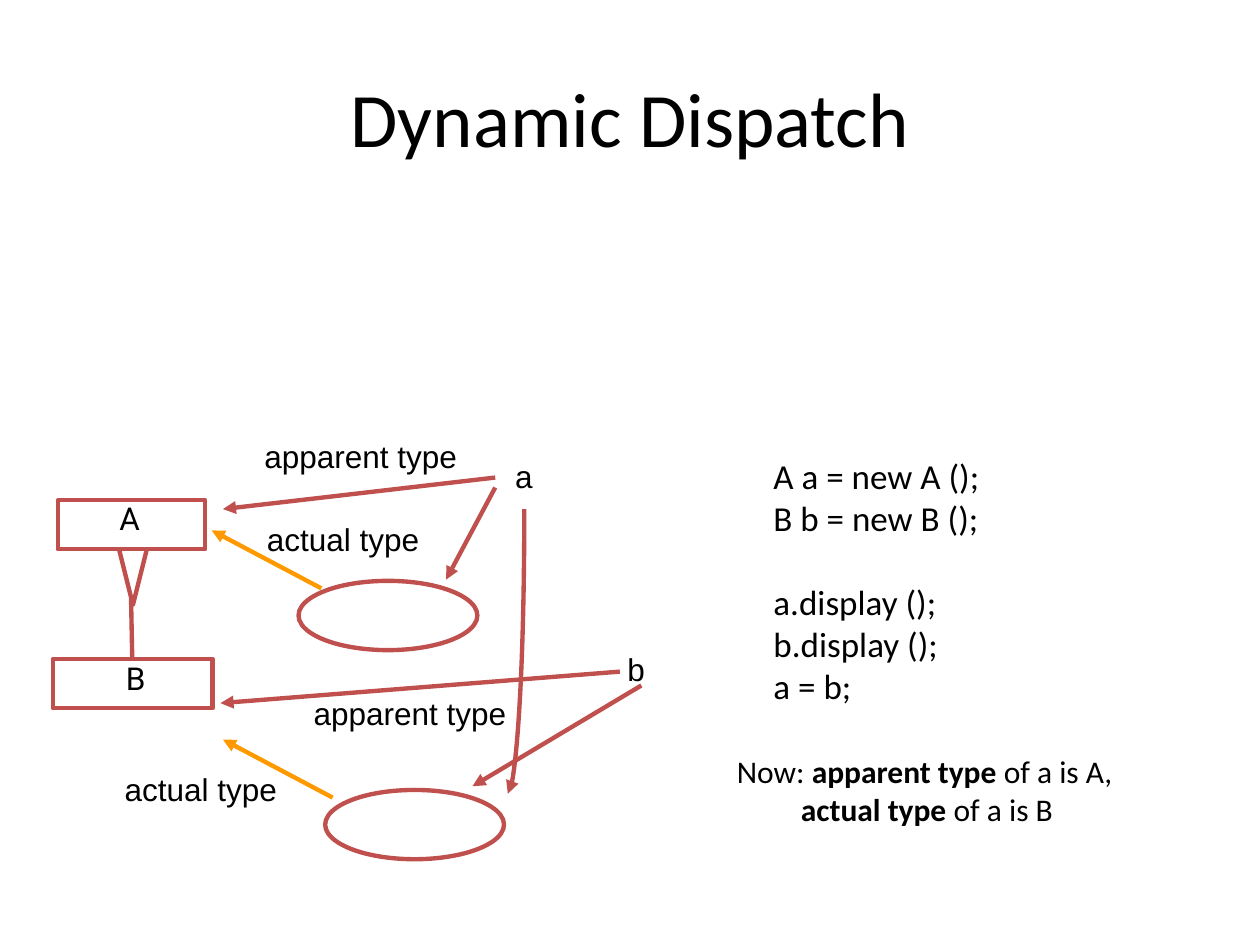
from lxml import etree
from pptx import Presentation
from pptx.dml.color import RGBColor
from pptx.enum.shapes import MSO_CONNECTOR, MSO_SHAPE
from pptx.enum.text import MSO_ANCHOR, PP_ALIGN
from pptx.oxml.ns import qn
from pptx.util import Pt

STRAIGHT, CURVE = MSO_CONNECTOR.STRAIGHT, MSO_CONNECTOR.CURVE
RECTANGLE, OVAL = MSO_SHAPE.RECTANGLE, MSO_SHAPE.OVAL
TRIANGLE = MSO_SHAPE.ISOSCELES_TRIANGLE
CENTER, MIDDLE = PP_ALIGN.CENTER, MSO_ANCHOR.MIDDLE
RED, ORANGE, WHITE, BLACK = "C0504D", "FF9900", "FFFFFF", "000000"
LINE_WIDTH = 2.5


def color(value):
    return RGBColor.from_string(value)


def shift(box, point):
    return box[0] + point[0], box[1] + point[1]


def add_span(para, text, font="Arial", size=18, bold=False):
    span = para.add_run()
    span.text = text
    span.font.name, span.font.size, span.font.bold = font, Pt(size), bold
    span.font.color.rgb = color(BLACK)


def add_text_box(page, place, size, wrap=False):
    box = page.shapes.add_textbox(*map(Pt, (*place, *size)))
    box.text_frame.word_wrap = wrap
    return box.text_frame


def add_label(page, place, text, width, **style):
    frame = add_text_box(page, place, (width, 29))
    add_span(frame.paragraphs[0], text, **style)


def add_outline(page, kind, place, size, fill=None):
    shape = page.shapes.add_shape(kind, *map(Pt, (*place, *size)))
    shape.shadow.inherit = False
    if fill:
        shape.fill.solid()
        shape.fill.fore_color.rgb = color(fill)
    else:
        shape.fill.background()
    shape.line.color.rgb = color(RED)
    shape.line.width = Pt(LINE_WIDTH)
    return shape


def add_line(page, start, end, stroke=RED, head=True, kind=STRAIGHT):
    line = page.shapes.add_connector(kind, *map(Pt, (*start, *end)))
    line.line.color.rgb = color(stroke)
    line.line.width = Pt(LINE_WIDTH)
    if head:
        etree.SubElement(line.line._get_or_add_ln(), qn("a:tailEnd"), type="triangle")
    etree.SubElement(line._element.spPr, qn("a:effectLst"))
    return line


def add_title(page, box):
    title = page.shapes.title
    title.left, title.top, title.width, title.height = map(Pt, box)
    title.text_frame.vertical_anchor = MIDDLE
    para = title.text_frame.paragraphs[0]
    para.alignment = CENTER
    add_span(para, "Dynamic Dispatch", font="Calibri", size=44)


def add_inheritance(page, box):
    add_line(page, shift(box, (45.6, 95.6)), shift(box, (44.9, 61)), head=False)
    arrow = add_outline(page, TRIANGLE, shift(box, (31.9, 8.4)), (28.1, 56.2), WHITE)
    arrow.rotation = 180
    classes = [
        ("A", (3.1, 4.8), 84.2, (31.2, 0.5)),
        ("B", (0.2, 95.6), 91.4, (34.8, 92)),
    ]
    for name, corner, width, label in classes:
        add_outline(page, RECTANGLE, shift(box, corner), (width, 28.1), WHITE)
        add_label(page, shift(box, label), name, 25, font="Roboto")


def add_reference(page, box, name, labels, instance, arrows):
    add_outline(page, OVAL, shift(box, instance), (102.2, 39.6))
    texts = [(name, 24.5), ("apparent type", 124.6), ("actual type", 102.2)]
    for (text, width), place in zip(texts, labels):
        add_label(page, shift(box, place), text, width)
    for (start, end), stroke in zip(arrows, (RED, RED, ORANGE)):
        add_line(page, shift(box, start), shift(box, end), stroke)


def add_reassignment(page, box):
    left, top, width, height = box
    middle, center = left + width / 2, top + height / 2
    start = middle - height / 2, center - width / 2
    end = middle + height / 2, center + width / 2
    line = add_line(page, start, end, kind=CURVE)
    properties = line._element.spPr
    properties.find(qn("a:xfrm")).set("rot", "5400000")
    properties.find(qn("a:prstGeom")).set("prst", "curvedConnector2")


def add_code(page, box):
    frame = add_text_box(page, box[:2], box[2:])
    lines = ["A a = new A ();", "B b = new B ();", "a.display ();", "b.display ();", "a = b;"]
    for index, text in enumerate(lines):
        para = frame.add_paragraph() if index else frame.paragraphs[0]
        if text == "a.display ();":
            para.space_before = Pt(24)
        add_span(para, text, font="Calibri", size=20)


def add_conclusion(page, box):
    frame = add_text_box(page, box[:2], box[2:], wrap=True)
    first, second = frame.paragraphs[0], frame.add_paragraph()
    second._p.get_or_add_pPr().set("marL", str(Pt(36.6)))
    spans = [
        (first, "Now: ", False),
        (first, "apparent type", True),
        (first, " of a is A,", False),
        (second, "actual type", True),
        (second, " of a is B", False),
    ]
    for para, text, bold in spans:
        add_span(para, text, font="Calibri", bold=bold)


def main():
    deck = Presentation()
    deck.slide_width, deck.slide_height = Pt(720), Pt(540)
    page = deck.slides.add_slide(deck.slide_layouts[5])
    add_title(page, (36, 21.6, 648, 90))
    add_inheritance(page, (30, 281))
    add_code(page, (434.9, 256.3, 133.2, 152.6))
    add_reference(
        page, (120, 246), "a",
        labels=[(167.3, 11.8), (24, 0.2), (25.4, 47.8)],
        instance=(50.6, 85.9),
        arrows=[((163, 32.6), (134.9, 85.2)), ((163, 26.9), (7.4, 44.9)),
                ((63.6, 90.2), (1, 57.1))],
    )
    add_reference(
        page, (64, 368), "b",
        labels=[(287.4, 0), (108.1, 25.1), (0.1, 68.3)],
        instance=(121.8, 83.4),
        arrows=[((302.5, 23.7), (206, 81.3)), ((290.2, 15.8), (62, 33.8)),
                ((126.1, 87.8), (63.4, 54.6))],
    )
    add_reassignment(page, (290.2, 290.9, 9.4, 162.7))
    add_conclusion(page, (414, 426.2, 240, 51))
    deck.save("out.pptx")


if __name__ == "__main__":
    main()
